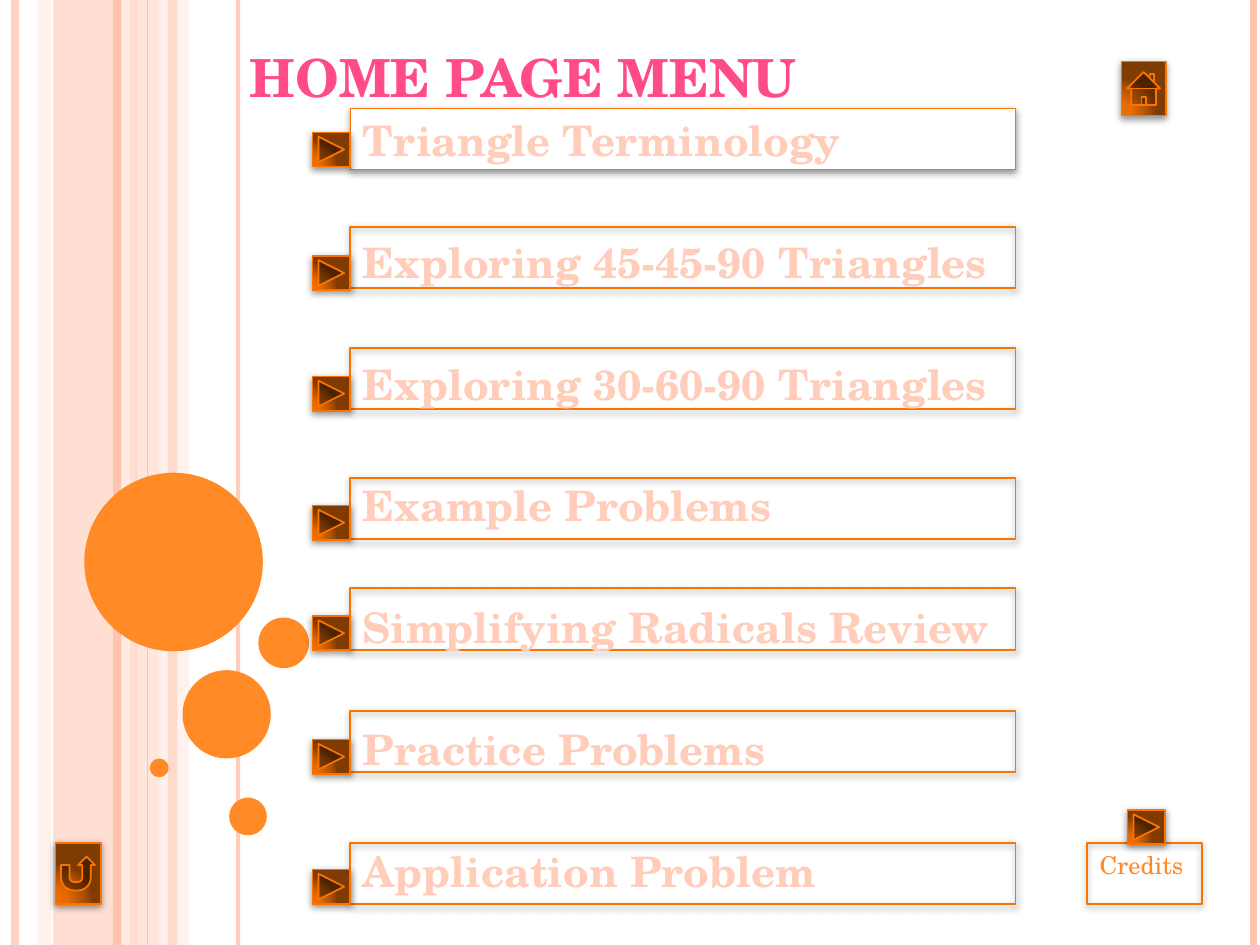
from lxml.etree import SubElement
from pptx import Presentation
from pptx.dml.color import RGBColor
from pptx.enum.shapes import MSO_CONNECTOR, MSO_SHAPE
from pptx.enum.text import MSO_ANCHOR, MSO_AUTO_SIZE, PP_ALIGN
from pptx.oxml import parse_xml
from pptx.oxml.ns import nsdecls, qn
from pptx.util import Cm, Pt

FONT = "TeX Gyre Schola"
WHITE = RGBColor(0xFF, 0xFF, 0xFF)
PEACH = RGBColor(0xFF, 0xC4, 0xAD)
PALE = RGBColor(0xFF, 0xDA, 0xCD)
FAINT = RGBColor(0xFF, 0xED, 0xE8)
ORANGE = RGBColor(0xFF, 0x8A, 0x26)
EDGE = RGBColor(0xFB, 0x74, 0x00)
PINK = RGBColor(0xFF, 0x4B, 0x89)
SALMON = RGBColor(0xFF, 0xCD, 0xBA)

# Content: menu entry, top of its box, top of its button (cm)
TITLE = "HOME PAGE MENU"
MENU = [
    ("Triangle Terminology", 2.18, 2.67),
    ("Exploring 45-45-90 Triangles", 4.57, 5.16),
    ("Exploring 30-60-90 Triangles", 7.01, 7.59),
    ("Example Problems", 9.63, 10.19),
    ("Simplifying Radicals Review", 11.86, 12.42),
    ("Practice Problems", 14.33, 14.91),
    ("Application Problem", 16.99, 17.53),
]
CREDIT = "Credits"

# Decoration: bands (left, width, colour, opacity %), rules (x, colour,
# points, opacity %), dots (left, top, size)
BANDS = [(1.07, 1.7, PEACH, 54), (0.76, 0.28, PALE, 36),
         (2.74, 0.51, PALE, 70), (3.18, 0.64, FAINT, 71),
         (3.38, 0.2, PEACH, 51)]
RULES = [(0.3, PEACH, 4.5, 73), (2.54, FAINT, 4.5, 83),
         (2.36, PEACH, 4.5, 100), (4.8, PEACH, 2.25, 82),
         (2.97, PEACH, 0.75, 100), (25.27, PEACH, 4.5, 100)]
DOTS = [(1.7, 9.53, 3.6), (3.68, 13.51, 1.78), (3.02, 15.29, 0.38),
        (4.62, 16.08, 0.76), (5.21, 12.45, 1.02)]
WIDE, HIGH = 25.4, 19.05
LEFT, BOX_W, BOX_H = 7.06, 13.41, 1.24
BTN_W, BTN_H = 0.76, 0.69

STOPS = [(0, "F06E00"), (30, "E76B00"), (75, "AE5000"), (100, "803B00")]
GLOW = (
    f'<a:gradFill {nsdecls("a")} rotWithShape="1"><a:gsLst>'
    + "".join(f'<a:gs pos="{pos * 1000}"><a:srgbClr val="{tint}"/></a:gs>'
              for pos, tint in STOPS)
    + '</a:gsLst><a:path path="circle"><a:fillToRect l="5000" t="100000" '
      'r="120000" b="10000"/></a:path></a:gradFill>')
SHADE = (
    f'<a:effectLst {nsdecls("a")}><a:outerShdw blurRad="50800" dist="20320" '
    'dir="5400000" rotWithShape="0"><a:srgbClr val="000000">'
    '<a:alpha val="42000"/></a:srgbClr></a:outerShdw></a:effectLst>')

deck = Presentation()
deck.slide_width, deck.slide_height = Cm(WIDE), Cm(HIGH)
slide = deck.slides.add_slide(deck.slide_layouts[1])
shapes = slide.shapes
title, body = slide.placeholders


def fade(part, rate):
    if rate < 100:
        tint = next(part._element.spPr.iter(qn("a:srgbClr")))
        SubElement(tint, qn("a:alpha")).set("val", str(rate * 1000))


def plain(kind, x, y, w, h, tint):
    part = shapes.add_shape(kind, Cm(x), Cm(y), Cm(w), Cm(h))
    part.shadow.inherit = False
    part.fill.solid()
    part.fill.fore_color.rgb = tint
    part.line.fill.background()
    return part


def button(kind, x, y, w, h, edge=1):
    part = shapes.add_shape(kind, Cm(x), Cm(y), Cm(w), Cm(h))
    part.fill.background()
    part.line.color.rgb = EDGE
    part.line.width = Pt(edge)
    part._element.spPr.append(parse_xml(SHADE))
    return part


def icon(kind, x, y, w=BTN_W, h=BTN_H):
    prop = button(kind, x, y, w, h)._element.spPr
    prop.replace(prop.find(qn("a:noFill")), parse_xml(GLOW))


def place(part, x, y, w, h, anchor):
    part.left, part.top, part.width, part.height = Cm(x), Cm(y), Cm(w), Cm(h)
    frame = part.text_frame
    frame.word_wrap = True
    frame.auto_size = MSO_AUTO_SIZE.NONE
    frame.vertical_anchor = anchor
    return frame


def style(para, size, tint, bold):
    para.alignment = PP_ALIGN.LEFT
    for run in para.runs:
        run.font.name = FONT
        run.font.size = Pt(size)
        run.font.bold = bold
        run.font.color.rgb = tint


# Background bands, rules and dots
for x, w, tint, rate in BANDS:
    fade(plain(MSO_SHAPE.RECTANGLE, x, 0, w, HIGH, tint), rate)
for x, tint, size, rate in RULES:
    rule = shapes.add_connector(MSO_CONNECTOR.STRAIGHT,
                                Cm(x), Cm(0), Cm(x), Cm(HIGH))
    rule.line.color.rgb = tint
    rule.line.width = Pt(size)
    SubElement(rule._element.spPr, qn("a:effectLst"))
    fade(rule, rate)
for x, y, size in DOTS:
    plain(MSO_SHAPE.OVAL, x, y, size, size, ORANGE)

# Menu boxes: the first is filled and thin
for i, (_, y, _) in enumerate(MENU):
    box = button(MSO_SHAPE.ACTION_BUTTON_CUSTOM, LEFT, y, BOX_W, BOX_H,
                 1 if i else 0.5)
    if i == 0:
        box.fill.solid()
        box.fill.fore_color.rgb = WHITE

# Title and menu text, raised above the boxes
for part in (title, body):
    shapes._spTree.append(part._element)
frame = place(title, 4.78, 0.66, 17.15, 1.65, MSO_ANCHOR.BOTTOM)
frame.text = TITLE
style(frame.paragraphs[0], 30, PINK, True)

frame = place(body, LEFT, 2.18, 14.4, 16.05, MSO_ANCHOR.TOP)
frame.text = "\n".join(name for name, _, _ in MENU)
for i, para in enumerate(frame.paragraphs):
    style(para, 24, SALMON, True)
    para.space_before = Pt(40.8 if i else 6)
    prop = para._p.get_or_add_pPr()
    prop.set("marL", "0")
    prop.set("indent", "0")
    SubElement(prop, qn("a:buNone"))

# Credits
button(MSO_SHAPE.ACTION_BUTTON_CUSTOM, 21.92, 16.99, 2.31, BOX_H)
note = shapes.add_textbox(0, 0, 0, 0)
frame = place(note, 21.92, 16.99, 2.31, 0.86, MSO_ANCHOR.BOTTOM)
frame.text = CREDIT
style(frame.paragraphs[0], 14, ORANGE, False)

# Navigation buttons
for _, _, y in MENU:
    icon(MSO_SHAPE.ACTION_BUTTON_FORWARD_OR_NEXT, LEFT - BTN_W, y)
icon(MSO_SHAPE.ACTION_BUTTON_FORWARD_OR_NEXT, 22.73, 16.33)
icon(MSO_SHAPE.ACTION_BUTTON_HOME, 22.61, 1.24, 0.89, 1.09)
icon(MSO_SHAPE.ACTION_BUTTON_RETURN, 1.12, 16.99, 0.91, BOX_H)

deck.save("out.pptx")
